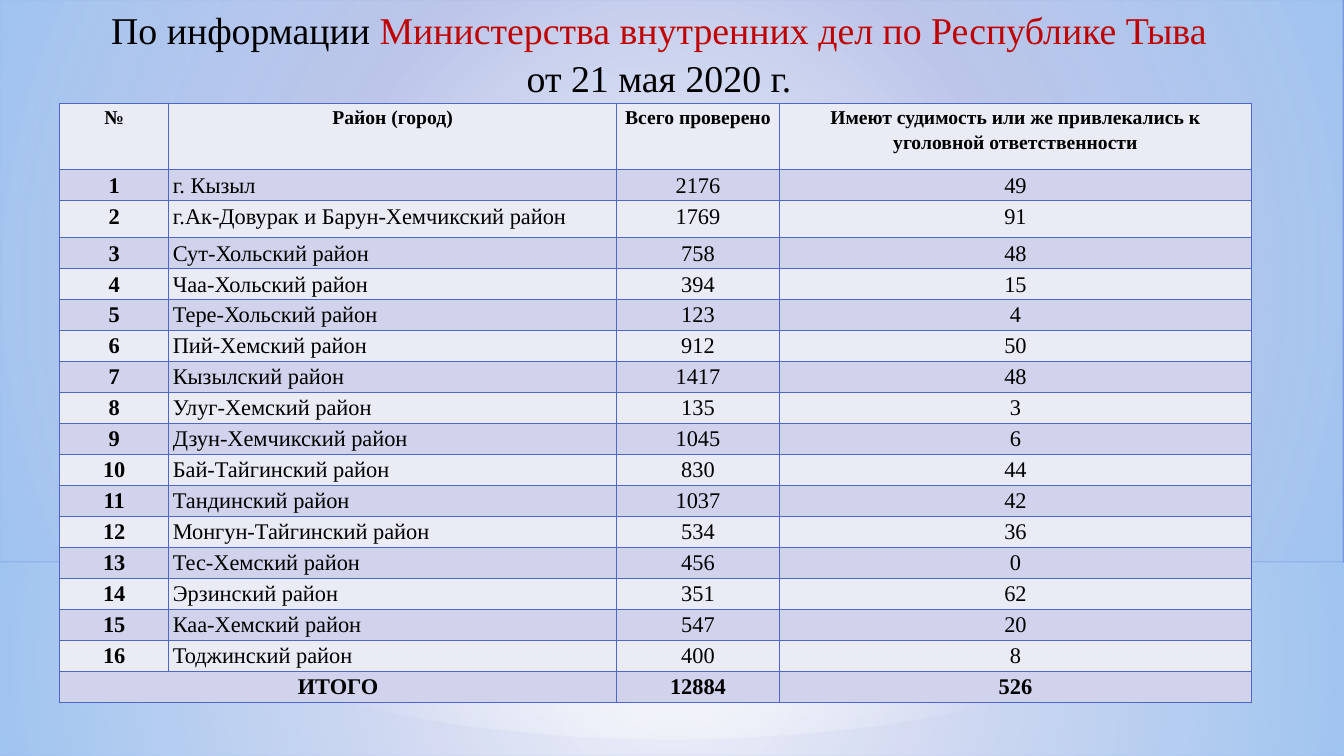
"""Build a slide with a table of checks by district of the Republic of Tuva."""
from dataclasses import dataclass

from pptx import Presentation
from pptx.dml.color import RGBColor
from pptx.enum.shapes import MSO_SHAPE
from pptx.enum.text import MSO_ANCHOR, PP_ALIGN
from pptx.oxml import parse_xml
from pptx.oxml.ns import nsdecls
from pptx.util import Inches, Pt


@dataclass(frozen=True)
class Theme:
    font: str = "Times New Roman"
    blue: str = "4E67C8"
    sky: str = "B4DCFA"
    white: str = "FFFFFF"
    ink: str = "000000"
    red: str = "C00000"
    bands: tuple = ("E9EBF5", "D0D3EB")
    title_size: int = 27
    header_size: int = 14
    body_size: int = 16


theme = Theme()
COLUMNS, ROWS = 160, 90

deck = Presentation()
deck.slide_width, deck.slide_height = Inches(13.333), Inches(7.5)
slide = deck.slides.add_slide(deck.slide_layouts[6])
slide.background.fill.solid()
slide.background.fill.fore_color.rgb = RGBColor.from_string(theme.blue)


def grid(*lengths):
    """Turn alternating column and row counts into slide lengths."""
    units = (deck.slide_width / COLUMNS, deck.slide_height / ROWS)
    return [round(length * units[i % 2]) for i, length in enumerate(lengths)]


def style(paragraph, size, bold=False, align=PP_ALIGN.CENTER, spacing=1.15):
    """Set the type and spacing of a paragraph."""
    paragraph.font.name = theme.font
    paragraph.font.size = Pt(size)
    paragraph.font.bold = bold
    paragraph.font.color.rgb = RGBColor.from_string(theme.ink)
    paragraph.alignment = align
    paragraph.line_spacing = spacing


radial = ('<a:path path="circle"><a:fillToRect l="50000" t="50000" '
          'r="50000" b="50000"/></a:path>')
vertical = '<a:lin ang="5400000" scaled="0"/>'
glows = [
    (MSO_SHAPE.RECTANGLE, 67, 23, radial,
     [(0, theme.white, 91), (37, theme.white, 76), (100, theme.sky, 79)]),
    (MSO_SHAPE.RECTANGLE, 0, 67, radial,
     [(0, theme.white, 89), (48, theme.white, 62), (100, theme.sky, 79)]),
    (MSO_SHAPE.RECTANGLE, 49.5, 30, vertical,
     [(0, theme.white, 0), (29, theme.white, 30), (45, theme.sky, 40),
      (55, theme.white, 26), (65, theme.sky, 60), (100, theme.white, 0)]),
    (MSO_SHAPE.OVAL, 21, 67, radial,
     [(0, theme.white, 100), (56, theme.white, 0)]),
]
for outline, top, height, direction, stops in glows:
    glow = slide.shapes.add_shape(outline, *grid(0, top, COLUMNS, height))
    stop_list = "".join(
        f'<a:gs pos="{position * 1000}"><a:srgbClr val="{color}">'
        f'<a:alpha val="{opacity * 1000}"/></a:srgbClr></a:gs>'
        for position, color, opacity in stops)
    glow.element.spPr.prstGeom.addnext(parse_xml(
        f'<a:gradFill {nsdecls("a")} rotWithShape="1">'
        f'<a:gsLst>{stop_list}</a:gsLst>{direction}</a:gradFill>'))
    glow.line.fill.background()
    glow.shadow.inherit = False

title = slide.shapes.add_textbox(*grid(0.8, 0, 155.3, 12.5)).text_frame
title.word_wrap = True
title.vertical_anchor = MSO_ANCHOR.MIDDLE
source_line, date_line = title.paragraphs[0], title.add_paragraph()
source_line.add_run().text = "По информации "
ministry = source_line.add_run()
ministry.text = "Министерства внутренних дел по Республике Тыва"
ministry.font.color.rgb = RGBColor.from_string(theme.red)
date_line.text = "от 21 мая 2020 г."
for line in title.paragraphs:
    style(line, theme.title_size, spacing=1.05)

districts = [
    ("г. Кызыл", 2176, 49),
    ("г.Ак-Довурак и Барун-Хемчикский район", 1769, 91),
    ("Сут-Хольский район", 758, 48),
    ("Чаа-Хольский район", 394, 15),
    ("Тере-Хольский район", 123, 4),
    ("Пий-Хемский район", 912, 50),
    ("Кызылский район", 1417, 48),
    ("Улуг-Хемский район", 135, 3),
    ("Дзун-Хемчикский район", 1045, 6),
    ("Бай-Тайгинский район", 830, 44),
    ("Тандинский район", 1037, 42),
    ("Монгун-Тайгинский район", 534, 36),
    ("Тес-Хемский район", 456, 0),
    ("Эрзинский район", 351, 62),
    ("Каа-Хемский район", 547, 20),
    ("Тоджинский район", 400, 8),
]
records = [
    ("№", "Район (город)", "Всего проверено",
     "Имеют судимость или же привлекались к уголовной ответственности"),
    *((number, *district) for number, district in enumerate(districts, 1)),
    ("ИТОГО", "", 12884, 526),
]
column_spans = [13, 53.3, 19.4, 56.2]
row_spans = [7.8, 3.69, 4.4] + [3.69] * (len(records) - 3)
checks = slide.shapes.add_table(
    len(records), len(column_spans),
    *grid(7.1, 12.36, sum(column_spans), sum(row_spans))).table
checks.first_row = checks.horz_banding = False
for column, span in zip(checks.columns, column_spans):
    column.width = grid(span)[0]
for row, span in zip(checks.rows, row_spans):
    row.height = grid(0, span)[1]

total = len(records) - 1
for r, record in enumerate(records):
    for c, entry in enumerate(record):
        cell = checks.cell(r, c)
        cell.text = str(entry)
        cell.margin_left = cell.margin_right = Inches(0.04)
        cell.margin_top = cell.margin_bottom = 0
        style(cell.text_frame.paragraphs[0],
              theme.body_size if r else theme.header_size,
              bold=r in (0, total) or c == 0,
              align=PP_ALIGN.LEFT if c == 1 and 0 < r < total else PP_ALIGN.CENTER)
        properties = cell._tc.get_or_add_tcPr()
        for side in ("lnL", "lnR", "lnT", "lnB"):
            properties.append(parse_xml(
                f'<a:{side} {nsdecls("a")} w="{Pt(1)}"><a:solidFill>'
                f'<a:srgbClr val="{theme.blue}"/></a:solidFill></a:{side}>'))
        cell.fill.solid()
        cell.fill.fore_color.rgb = RGBColor.from_string(theme.bands[r % 2])
checks.cell(total, 0).merge(checks.cell(total, 1))

deck.save("out.pptx")
